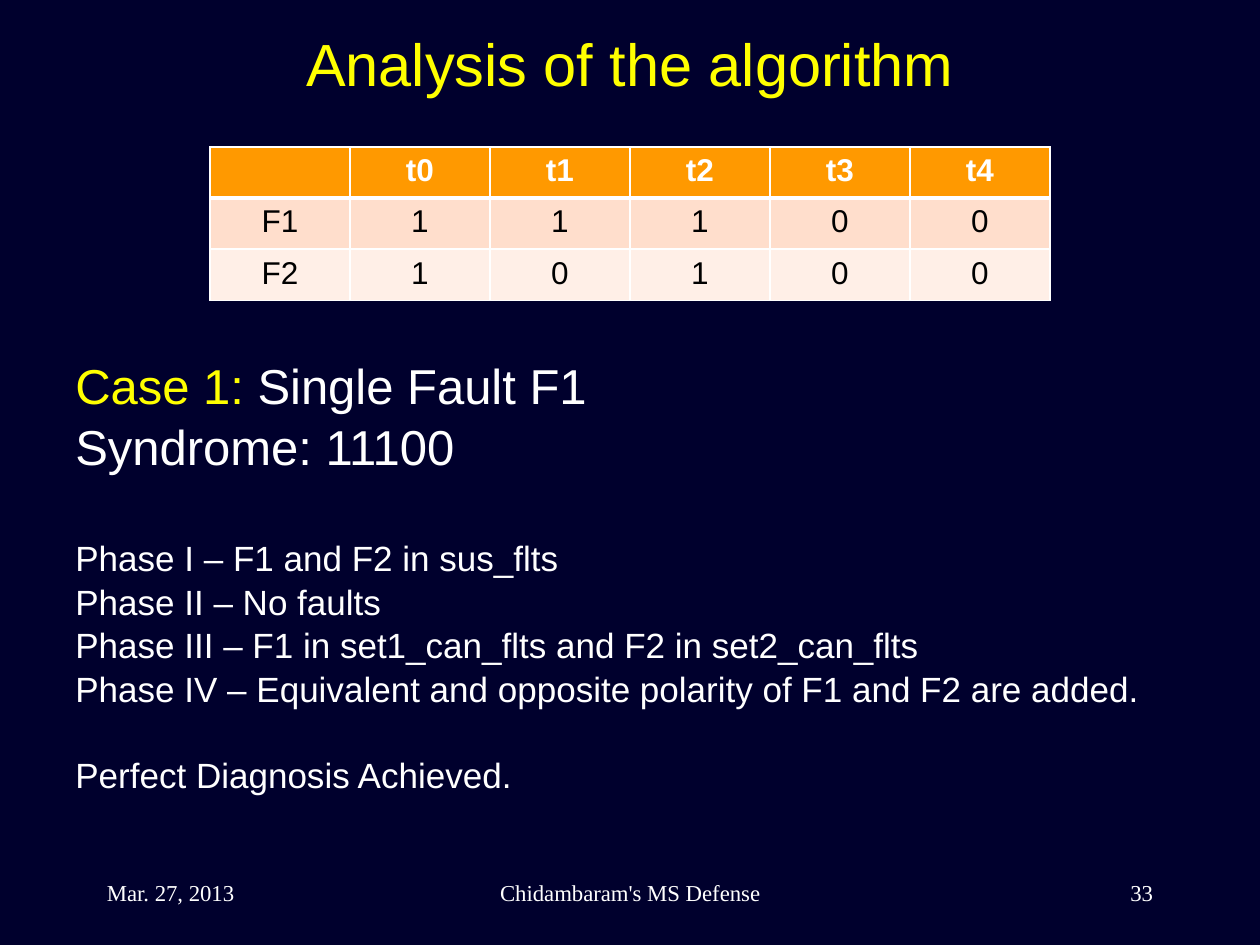
from pptx import Presentation
from pptx import util as u
from pptx.dml.color import RGBColor
from pptx.enum import text
from pptx.oxml import parse_xml
from pptx.oxml.ns import nsdecls

Pt = u.Pt
AL = text.PP_ALIGN
COLORS = {"bg": "00002D", "accent": "FFFF00", "white": "FFFFFF", "black": "000000",
          "header": "FF9900", "odd": "FFDECC", "even": "FFEFE7"}


def style(font, size, color, name="Arial", bold=False):
    font.size, font.name, font.bold = Pt(size), name, bold
    font.color.rgb = RGBColor.from_string(COLORS[color])


def set_border(cell, side, width):
    cell._tc.get_or_add_tcPr().append(parse_xml(
        f'<a:{side} {nsdecls("a")} w="{Pt(width)}"><a:solidFill>'
        f'<a:srgbClr val="{COLORS["white"]}"/></a:solidFill></a:{side}>'))


prs = Presentation()
prs.slide_width, prs.slide_height = Pt(720), Pt(540)
s = prs.slides.add_slide(prs.slide_layouts[5])
s.background.fill.solid()
s.background.fill.fore_color.rgb = RGBColor.from_string(COLORS["bg"])

title = s.shapes.title
title.left, title.top, title.width, title.height = Pt(36), Pt(12), Pt(648), Pt(64)
tf = title.text_frame
tf.text = "Analysis of the algorithm"
tf.vertical_anchor = text.MSO_ANCHOR.TOP
tf.auto_size = text.MSO_AUTO_SIZE.NONE
p = tf.paragraphs[0]
p.alignment = AL.CENTER
style(p.font, 34, "accent")

footers = [(54, 150, AL.LEFT, "Mar. 27, 2013"),
           (246, 228, AL.CENTER, "Chidambaram's MS Defense"),
           (516, 150, AL.RIGHT, "33")]
for left, width, align, label in footers:
    tf = s.shapes.add_textbox(Pt(left), Pt(492), Pt(width), Pt(36)).text_frame
    tf.word_wrap = True
    tf.vertical_anchor = text.MSO_ANCHOR.MIDDLE
    p = tf.paragraphs[0]
    p.text, p.alignment = label, align
    style(p.font, 13, "white", "Times New Roman")

rows = [["", "t0", "t1", "t2", "t3", "t4"],
        ["F1", "1", "1", "1", "0", "0"],
        ["F2", "1", "0", "1", "0", "0"]]
fills = ["header", "odd", "even"]
table = s.shapes.add_table(3, 6, Pt(120), Pt(84), Pt(480), Pt(87.6)).table
for i, row in enumerate(rows):
    for j, value in enumerate(row):
        cell = table.cell(i, j)
        for side in ("lnL", "lnR", "lnT", "lnB"):
            heavy = (i, side) in [(0, "lnB"), (1, "lnT")]
            set_border(cell, side, 3 if heavy else 1)
        cell.fill.solid()
        cell.fill.fore_color.rgb = RGBColor.from_string(COLORS[fills[i]])
        p = cell.text_frame.paragraphs[0]
        p.text, p.alignment = value, AL.CENTER
        style(p.font, 18, "black" if i else "white", bold=i == 0)

body = [(28, 0, [("Case 1: ", "accent"), ("Single Fault F1", "white")]),
        (28, 1.4, [("Syndrome: 11100", "white")]),
        (20, 34.8, [("Phase I – F1 and F2 in sus_flts", "white")]),
        (20, 1, [("Phase II – No faults", "white")]),
        (20, 1, [("Phase III – F1 in set1_can_flts and F2 in set2_can_flts", "white")]),
        (20, 1, [("Phase IV – Equivalent and opposite polarity of F1 and F2 are added.", "white")]),
        (20, 25, [("Perfect Diagnosis Achieved.", "white")])]
tf = s.shapes.add_textbox(Pt(36), Pt(199.6), Pt(648), Pt(280)).text_frame
tf.word_wrap = True
for i, (size, gap, runs) in enumerate(body):
    p = tf.add_paragraph() if i else tf.paragraphs[0]
    p.space_before = Pt(gap)
    for label, color in runs:
        r = p.add_run()
        r.text = label
        style(r.font, size, color)

prs.save("out.pptx")
